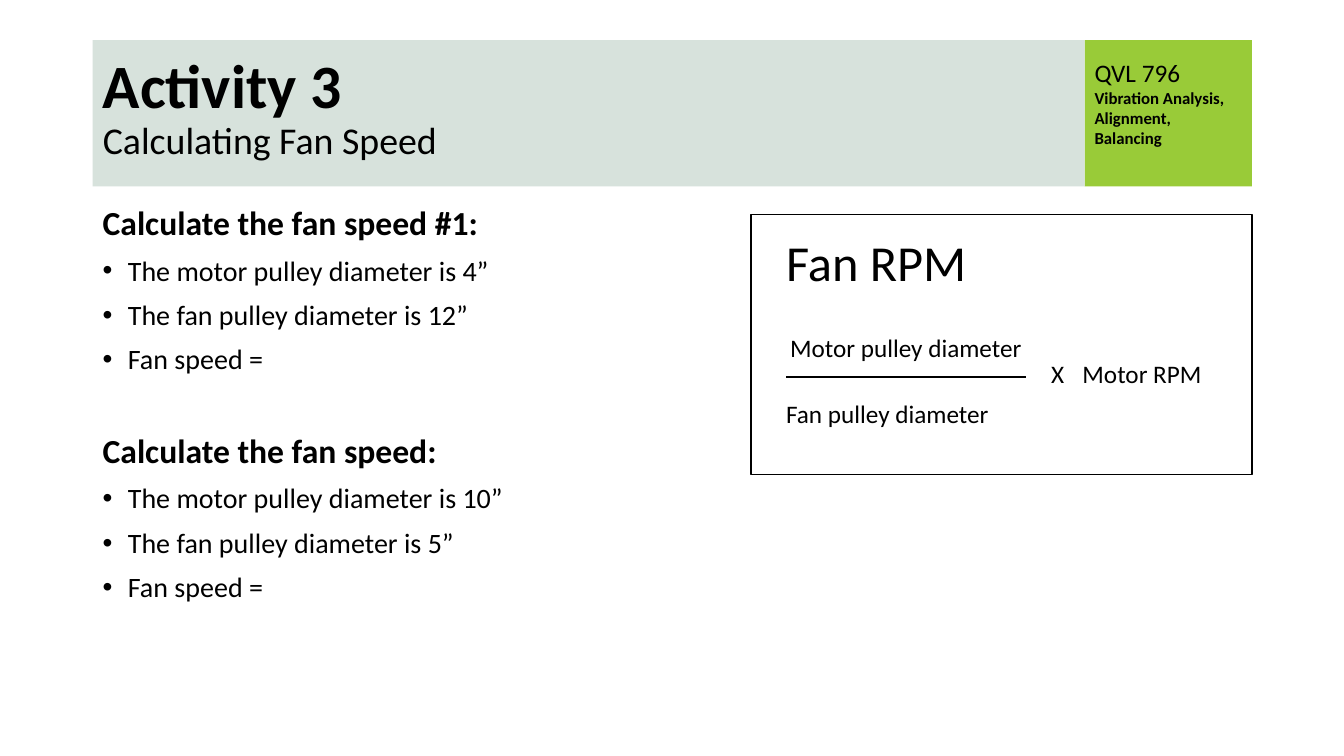
from dataclasses import dataclass
from typing import Optional

from lxml import etree
from pptx import Presentation
from pptx import util as u
from pptx.dml.color import RGBColor
from pptx.enum import shapes, text
from pptx.oxml.ns import qn

BLACK = RGBColor(0x00, 0x00, 0x00)
LIME = RGBColor(0x99, 0xCB, 0x38)
SAGE = RGBColor(0xD7, 0xE2, 0xDC)
FONT = "Calibri"
BULLET_INDENT = u.Inches(0.25)

prs = Presentation()
prs.slide_width = u.Inches(13.33)
prs.slide_height = u.Inches(7.5)


@dataclass(frozen=True)
class Box:
    left: float
    top: float
    width: float
    height: float


@dataclass(frozen=True)
class Line:
    text: str
    size: float
    bold: bool = False
    bullet: bool = False
    before: float = 0
    spacing: float = 1.0


@dataclass(frozen=True)
class Label:
    box: Box
    lines: tuple[Line, ...]


@dataclass(frozen=True)
class Exercise:
    heading: str
    motor_pulley: str
    fan_pulley: str
    before: float


LEFT, TOP, BAND_HEIGHT = 6.9, 5.33, 19.33
BADGE_LEFT, BADGE_WIDTH = 80.7, 12.45
BAND = Box(LEFT, TOP, BADGE_LEFT - LEFT, BAND_HEIGHT)
BADGE = Box(BADGE_LEFT, TOP, BADGE_WIDTH, BAND_HEIGHT)
TITLE = Box(LEFT, 6.67, 60.08, 16.93)
BODY = Box(LEFT, 26.67, 86.25, 63.47)
FRAME = Box(55.88, 28.4, 37.28, 34.4)
FRACTION_BAR = Box(58.5, 49.87, 17.85, 0)

TITLE_LINES = (Line("Activity 3", 44, bold=True), Line("Calculating Fan Speed", 27))
COURSE = Label(
    Box(BADGE_LEFT, 6.93, BADGE_WIDTH, 13.47),
    (Line("QVL 796", 18), Line("Vibration Analysis, Alignment, Balancing", 12, bold=True)),
)
EXERCISES = (
    Exercise("Calculate the fan speed #1:", "4”", "12”", 0),
    Exercise("Calculate the fan speed:", "10”", "5”", 42),
)
FORMULA = (
    Label(Box(57.75, 29.87, 16.13, 9.47), (Line("Fan RPM", 36),)),
    Label(Box(58.05, 43.33, 20.25, 5.33), (Line("Motor pulley diameter", 18),)),
    Label(Box(57.75, 52, 18.6, 5.33), (Line("Fan pulley diameter", 18),)),
    Label(Box(77.48, 46.67, 3.15, 5.33), (Line("X", 18),)),
    Label(Box(79.8, 46.67, 11.03, 5.33), (Line("Motor RPM", 18),)),
)


def across(share: float) -> int:
    return round(prs.slide_width * share / 100)


def down(share: float) -> int:
    return round(prs.slide_height * share / 100)


def place(box: Box) -> tuple[int, int, int, int]:
    return across(box.left), down(box.top), across(box.width), down(box.height)


def add_run(p, line: Line) -> None:
    r = p.add_run()
    r.text = line.text
    r.font.name = FONT
    r.font.size = u.Pt(line.size)
    r.font.bold = line.bold
    r.font.color.rgb = BLACK


def add_bullet(p) -> None:
    props = p._p.get_or_add_pPr()
    props.set("marL", str(BULLET_INDENT))
    props.set("indent", str(-BULLET_INDENT))
    etree.SubElement(props, qn("a:buFont")).set("typeface", "Arial")
    etree.SubElement(props, qn("a:buChar")).set("char", "•")


def add_rect(s, box: Box, fill: Optional[RGBColor], line: Optional[RGBColor]) -> None:
    sp = s.shapes.add_shape(shapes.MSO_SHAPE.RECTANGLE, *place(box))
    sp.shadow.inherit = False
    if fill is None:
        sp.fill.background()
    else:
        sp.fill.solid()
        sp.fill.fore_color.rgb = fill
    if line is None:
        sp.line.fill.background()
    else:
        sp.line.color.rgb = line
        sp.line.width = u.Pt(1)


def add_label(s, label: Label) -> None:
    tf = s.shapes.add_textbox(*place(label.box)).text_frame
    tf.word_wrap = True
    for i, line in enumerate(label.lines):
        p = tf.add_paragraph() if i else tf.paragraphs[0]
        p.line_spacing = line.spacing
        p.space_before = u.Pt(line.before)
        if line.bullet:
            add_bullet(p)
        add_run(p, line)


def exercise_lines(exercise: Exercise) -> tuple[Line, ...]:
    facts = (
        f"The motor pulley diameter is {exercise.motor_pulley}",
        f"The fan pulley diameter is {exercise.fan_pulley}",
        "Fan speed =",
    )
    heading = Line(exercise.heading, 24, bold=True, before=exercise.before, spacing=0.9)
    return heading, *(Line(fact, 20, bullet=True, before=10, spacing=0.9) for fact in facts)


def set_title(s) -> None:
    title = s.shapes.title
    title.left, title.top, title.width, title.height = place(TITLE)
    s.shapes._spTree.append(title._element)
    tf = title.text_frame
    tf.word_wrap = True
    tf.auto_size = text.MSO_AUTO_SIZE.NONE
    tf.vertical_anchor = text.MSO_ANCHOR.TOP
    p = tf.paragraphs[0]
    p.alignment = text.PP_ALIGN.LEFT
    p.line_spacing = 0.9
    for i, line in enumerate(TITLE_LINES):
        if i:
            p.add_line_break()
        add_run(p, line)


def add_fraction_bar(s, box: Box) -> None:
    left, top, width, height = place(box)
    bar = s.shapes.add_connector(
        shapes.MSO_CONNECTOR.STRAIGHT, left, top, left + width, top + height
    )
    bar.line.color.rgb = BLACK
    bar.line.width = u.Pt(1.5)
    etree.SubElement(bar._element.spPr, qn("a:effectLst"))


def main() -> None:
    s = prs.slides.add_slide(prs.slide_layouts[5])
    add_rect(s, BADGE, LIME, None)
    add_label(s, COURSE)
    add_rect(s, BAND, SAGE, None)
    set_title(s)
    add_label(s, Label(BODY, tuple(line for e in EXERCISES for line in exercise_lines(e))))
    add_rect(s, FRAME, None, BLACK)
    for label in FORMULA:
        add_label(s, label)
    add_fraction_bar(s, FRACTION_BAR)
    prs.save("out.pptx")


if __name__ == "__main__":
    main()
